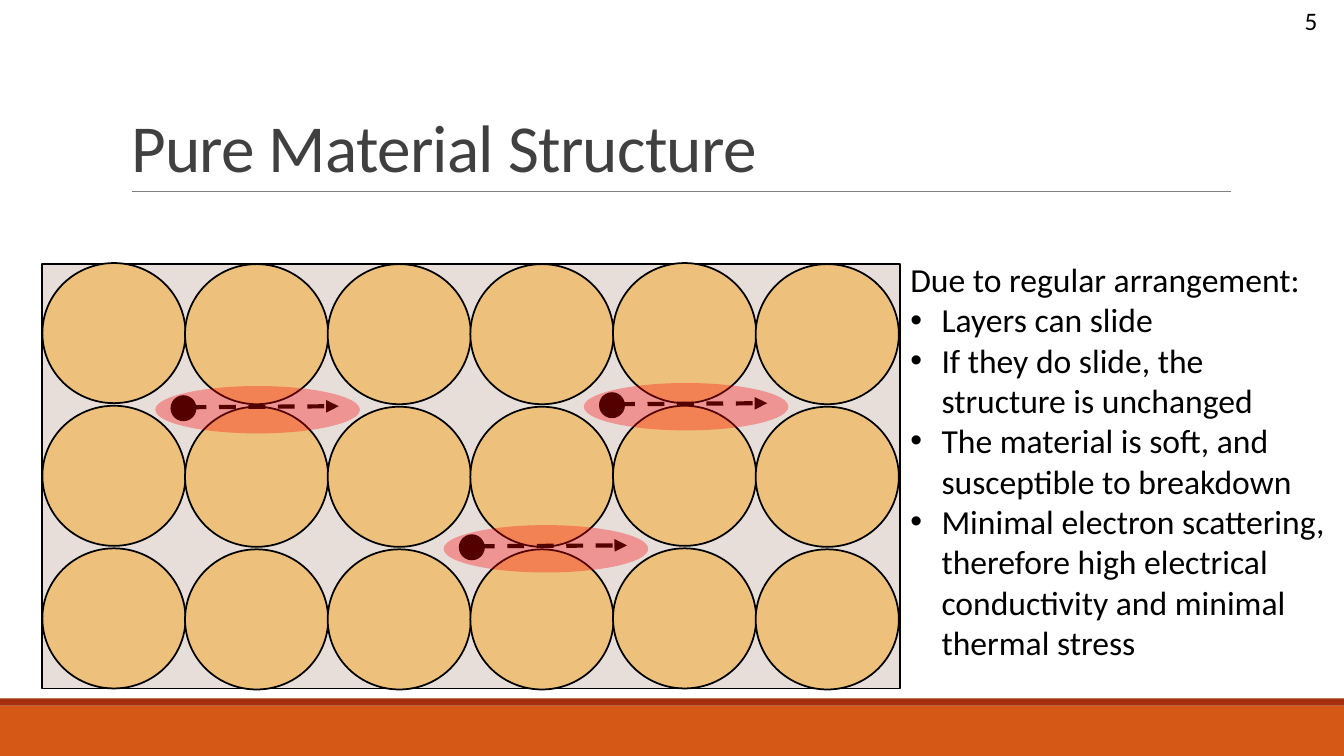
from lxml import etree
from pptx import Presentation
from pptx.dml.color import RGBColor
from pptx.enum.dml import MSO_LINE
from pptx.enum.shapes import MSO_CONNECTOR as CONN, MSO_SHAPE as SHAPE
from pptx.enum.text import MSO_ANCHOR as ANCHOR, PP_ALIGN as ALIGN
from pptx.oxml.ns import qn
from pptx.util import Inches, Pt

BLACK = RGBColor(0, 0, 0)
TITLE_GREY = RGBColor(0x40, 0x40, 0x40)
RULE_GREY = RGBColor(0x80, 0x80, 0x80)
ORANGE = RGBColor(0xD5, 0x58, 0x16)
RUST = RGBColor(0xA5, 0x30, 0x0F)
LATTICE = RGBColor(0xE7, 0xDE, 0xDA)
ATOM = RGBColor(0xED, 0xC1, 0x7C)
RED = RGBColor(0xFF, 0, 0)

TITLE = "Pure Material Structure"
NUMBER = "5"
INTRO = "Due to regular arrangement:"
POINTS = [
    "Layers can slide",
    "If they do slide, the structure is unchanged",
    "The material is soft, and susceptible to breakdown",
    "Minimal electron scattering, therefore high electrical "
    "conductivity and minimal thermal stress",
]
BARS = [(7, 0.5, ORANGE), (6.93, 0.07, RUST)]
ROWS, COLS = 3, 6
LEFT, TOP, PITCH = 0.42, 2.62, 1.415
ATOM_W, ATOM_H = 1.42, 1.39
ELECTRONS = [(1.54, 3.83), (5.79, 3.8), (4.4, 5.21)]


def add_shape(shapes, kind, box, fill, line=None):
    """Add a flat filled shape, outlined only when a line colour is given."""
    sp = shapes.add_shape(kind, *map(Inches, box))
    sp.shadow.inherit = False
    sp.fill.solid()
    sp.fill.fore_color.rgb = fill
    if line is None:
        sp.line.fill.background()
    else:
        sp.line.color.rgb = line
        sp.line.width = Pt(1.25)
    return sp


def add_line(shapes, ends, color, width):
    """Add a straight line without a shadow."""
    cx = shapes.add_connector(CONN.STRAIGHT, *map(Inches, ends))
    cx.line.color.rgb = color
    cx.line.width = Pt(width)
    etree.SubElement(cx._element.spPr, qn("a:effectLst"))
    return cx


def add_electron(shapes, x, y):
    """Add a moving electron with its dashed arrow and red halo."""
    group = shapes.add_group_shape().shapes
    add_shape(group, SHAPE.OVAL, (x + 0.16, y + 0.1, 0.24, 0.24), BLACK, BLACK)
    arrow = add_line(group, (x + 0.34, y + 0.21, x + 1.82, y + 0.2), BLACK, 3)
    arrow.line.dash_style = MSO_LINE.DASH
    etree.SubElement(arrow.line._get_or_add_ln(), qn("a:tailEnd"), type="triangle")
    halo = add_shape(group, SHAPE.OVAL, (x, y, 2.03, 0.47), RED)
    color = halo._element.spPr.find(qn("a:solidFill"))[0]
    etree.SubElement(color, qn("a:alpha"), val="33000")


def style(p, size, color=BLACK):
    """Apply the slide's font to every run of a paragraph."""
    for r in p.runs:
        for name, value in {"name": "Calibri", "size": Pt(size)}.items():
            setattr(r.font, name, value)
        r.font.color.rgb = color


def add_text(shapes, box, lines, size):
    """Add a text box whose lines after the first are bulleted."""
    tf = shapes.add_textbox(*map(Inches, box)).text_frame
    tf.word_wrap = True
    for i, text in enumerate(lines):
        p = tf.paragraphs[0] if i == 0 else tf.add_paragraph()
        if i:
            pPr = p._p.get_or_add_pPr()
            pPr.set("marL", str(Inches(0.31)))
            pPr.set("indent", str(-Inches(0.31)))
            etree.SubElement(pPr, qn("a:buFont"), typeface="Arial")
            etree.SubElement(pPr, qn("a:buChar"), char="•")
        p.add_run().text = text
        style(p, size)


def add_title(s):
    """Place and format the title placeholder."""
    sp = s.shapes.title
    sp.left, sp.top, sp.width, sp.height = map(Inches, (1.2, 0.31, 11, 1.59))
    tf = sp.text_frame
    tf.text = TITLE
    tf.vertical_anchor = ANCHOR.BOTTOM
    p = tf.paragraphs[0]
    p.alignment = ALIGN.LEFT
    p.line_spacing = 0.85
    style(p, 48, TITLE_GREY)
    p.runs[0].font._element.set("spc", "-50")


def main():
    """Build the slide and save it."""
    prs = Presentation()
    prs.slide_width, prs.slide_height = Inches(13.33), Inches(7.5)
    s = prs.slides.add_slide(prs.slide_layouts[5])
    shapes = s.shapes
    for y, height, color in BARS:
        add_shape(shapes, SHAPE.RECTANGLE, (0, y, 13.33, height), color)
    add_line(shapes, (1.31, 1.9, 12.21, 1.9), RULE_GREY, 0.5)
    add_title(s)

    add_shape(shapes, SHAPE.RECTANGLE, (LEFT, TOP, 8.51, 4.21), LATTICE, BLACK)
    for row in range(ROWS):
        for col in range(COLS):
            lift = 0.01 if col % 4 == 0 else 0
            box = (LEFT + col * PITCH, TOP + row * PITCH - lift, ATOM_W, ATOM_H)
            add_shape(shapes, SHAPE.OVAL, box, ATOM, BLACK)
    add_text(shapes, (8.93, 2.52, 4.41, 4.54), [INTRO] + POINTS, 24)
    for x, y in ELECTRONS:
        add_electron(shapes, x, y)
    add_text(shapes, (12.84, 0, 0.49, 0.4), [NUMBER], 18)
    prs.save("out.pptx")


if __name__ == "__main__":
    main()
